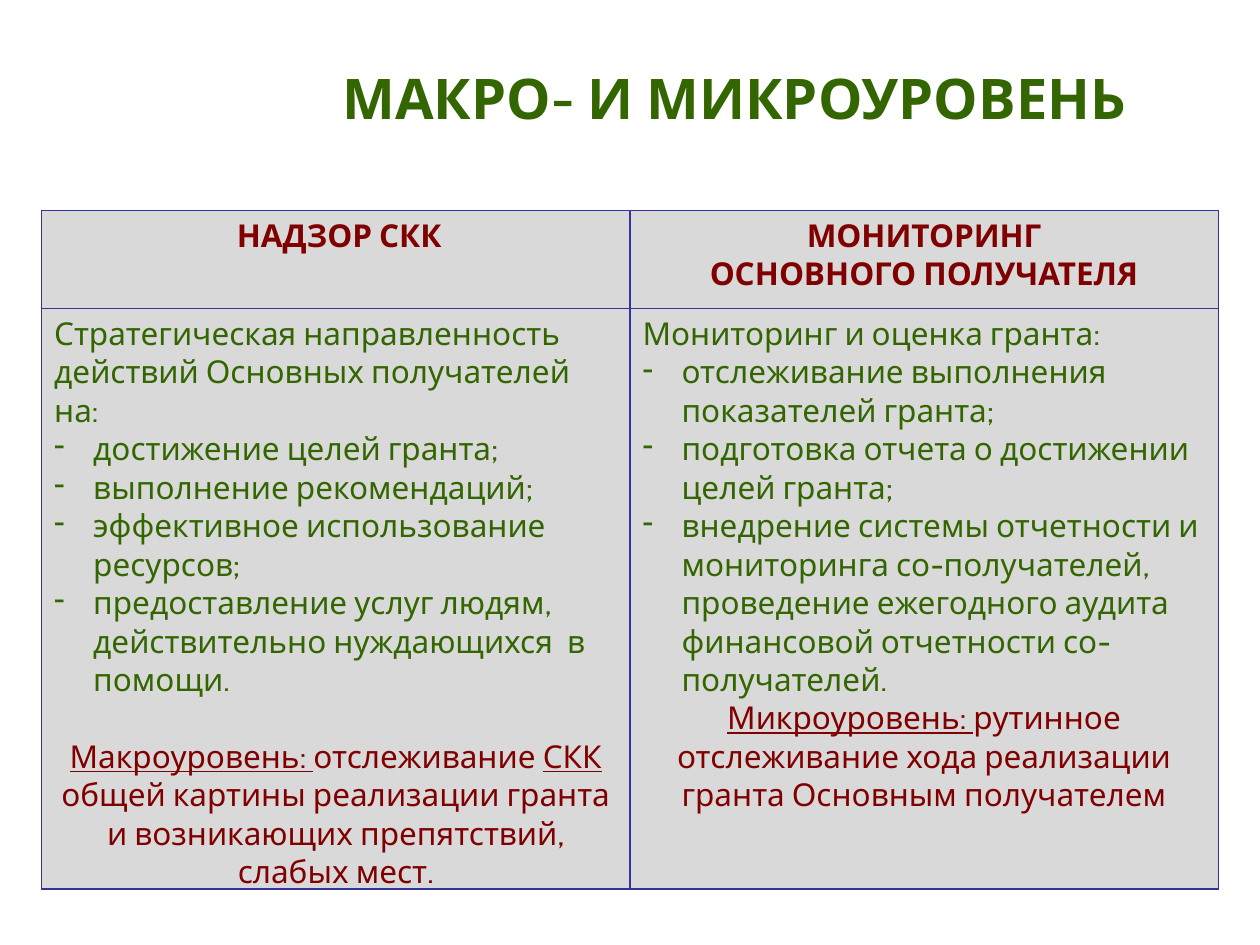
from dataclasses import dataclass

from lxml import etree
from pptx import Presentation
from pptx.dml.color import RGBColor
from pptx.enum.text import MSO_ANCHOR, PP_ALIGN
from pptx.oxml.ns import qn
from pptx.util import Inches, Pt

CENTER = PP_ALIGN.CENTER
LEFT = PP_ALIGN.LEFT
MIDDLE = MSO_ANCHOR.MIDDLE
BLANK_LAYOUT = 6


@dataclass(frozen=True)
class Theme:
    font: str = "Cabin"
    green: str = "336600"
    maroon: str = "800000"
    border: str = "333399"
    cell: str = "D9D9D9"
    title_size: int = 32
    body_size: int = 18
    line_gap: int = 22
    border_width: int = 1


class SlideBuilder:
    def __init__(self, slide, theme):
        self.slide = slide
        self.theme = theme

    def run(self, para, text, size, color, bold=False, underline=False):
        span = para.add_run()
        span.text = text
        font = span.font
        font.name = self.theme.font
        font.size = Pt(size)
        font.bold = bold
        font.underline = underline
        font.color.rgb = RGBColor.from_string(color)

    def title(self, text, left, top, width, height):
        box = self.slide.shapes.add_textbox(
            Inches(left), Inches(top), Inches(width), Inches(height))
        frame = box.text_frame
        frame.word_wrap = True
        frame.vertical_anchor = MIDDLE
        para = frame.paragraphs[0]
        para.alignment = CENTER
        self.run(para, text, self.theme.title_size, self.theme.green, bold=True)

    def table(self, left, top, column_widths, row_heights):
        grid = self.slide.shapes.add_table(
            len(row_heights), len(column_widths), Inches(left), Inches(top),
            Inches(sum(column_widths)), Inches(sum(row_heights))).table
        for column, width in zip(grid.columns, column_widths):
            column.width = Inches(width)
        for row, height in zip(grid.rows, row_heights):
            row.height = Inches(height)
        for cell in grid.iter_cells():
            cell.fill.solid()
            cell.fill.fore_color.rgb = RGBColor.from_string(self.theme.cell)
            self.borders(cell)
        return grid

    def borders(self, cell):
        properties = cell._tc.get_or_add_tcPr()
        for position, side in enumerate(("a:lnL", "a:lnR", "a:lnT", "a:lnB")):
            line = etree.Element(qn(side), w=str(Pt(self.theme.border_width)))
            fill = etree.SubElement(line, qn("a:solidFill"))
            etree.SubElement(fill, qn("a:srgbClr"), val=self.theme.border)
            properties.insert(position, line)

    def dash(self, para, indent=0.31):
        properties = para._p.get_or_add_pPr()
        properties.set("marL", str(Inches(indent)))
        properties.set("indent", str(-Inches(indent)))
        etree.SubElement(properties, qn("a:buChar"), char="-")

    def paragraph(self, frame, first):
        return frame.paragraphs[0] if first else frame.add_paragraph()

    def header_cell(self, cell, lines):
        for index, text in enumerate(lines):
            para = self.paragraph(cell.text_frame, index == 0)
            para.alignment = CENTER
            self.run(para, text, self.theme.body_size, self.theme.maroon, bold=True)

    def body_cell(self, cell, intro, items, summary, gap_lines):
        theme, frame = self.theme, cell.text_frame
        for index, text in enumerate([intro, *items]):
            para = self.paragraph(frame, index == 0)
            para.alignment = LEFT
            if index:
                self.dash(para)
            self.run(para, text, theme.body_size, theme.green)
        # Closing summary, with its key words underlined
        para = frame.add_paragraph()
        para.alignment = CENTER
        if gap_lines:
            para.space_before = Pt(gap_lines * theme.line_gap)
        for text, underline in summary:
            self.run(para, text, theme.body_size, theme.maroon, underline=underline)


HEADERS = [
    [" НАДЗОР СКК"],
    ["МОНИТОРИНГ", "ОСНОВНОГО ПОЛУЧАТЕЛЯ"],
]

BODIES = [
    dict(
        intro="Стратегическая направленность действий Основных получателей на:",
        items=[
            "достижение целей гранта;",
            "выполнение рекомендаций;",
            "эффективное использование ресурсов;",
            "предоставление услуг людям, действительно нуждающихся  в помощи.",
        ],
        summary=[
            ("Макроуровень: ", True),
            ("отслеживание ", False),
            ("СКК ", True),
            ("общей картины реализации гранта и возникающих препятствий, "
             "слабых мест.", False),
        ],
        gap_lines=1,
    ),
    dict(
        intro="Мониторинг и оценка гранта:",
        items=[
            "отслеживание выполнения показателей гранта;",
            "подготовка отчета о достижении целей гранта;",
            "внедрение системы отчетности и мониторинга со-получателей, "
            "проведение ежегодного аудита финансовой отчетности со-получателей.",
        ],
        summary=[
            ("Микроуровень: ", True),
            ("рутинное отслеживание хода реализации гранта Основным "
             "получателем", False),
        ],
        gap_lines=0,
    ),
]


def main():
    deck = Presentation()
    deck.slide_width = Inches(10)
    deck.slide_height = Inches(7.5)
    page = deck.slides.add_slide(deck.slide_layouts[BLANK_LAYOUT])
    builder = SlideBuilder(page, Theme())

    # Title
    builder.title("МАКРО- И МИКРОУРОВЕНЬ ", 1.92, 0.17, 7.92, 1.2)

    # Comparison table
    grid = builder.table(0.33, 1.67, [4.67, 4.67], [0.78, 4.47])
    for column, (header, body) in enumerate(zip(HEADERS, BODIES)):
        builder.header_cell(grid.cell(0, column), header)
        builder.body_cell(grid.cell(1, column), **body)

    deck.save("out.pptx")


if __name__ == "__main__":
    main()
